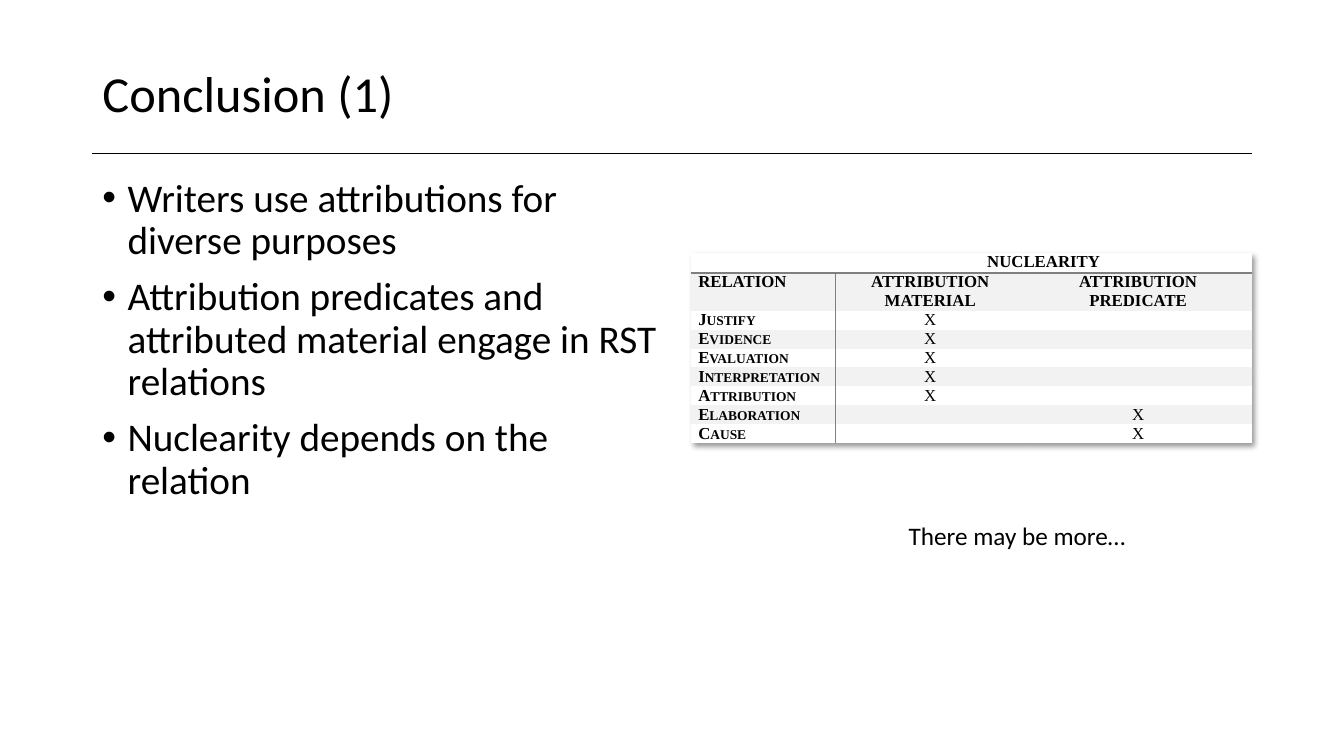
from lxml.etree import SubElement
from pptx import Presentation
from pptx.dml.color import RGBColor
from pptx.enum.shapes import MSO_CONNECTOR
from pptx.enum.text import MSO_ANCHOR, MSO_AUTO_SIZE, PP_ALIGN
from pptx.oxml import parse_xml
from pptx.oxml.ns import nsdecls, qn
from pptx.util import Pt

PX = 9525
COLORS = {"text": "000000", "rule": "7F7F7F", "light": "FFFFFF", "band": "F2F2F2"}
NO_STYLE = "{2D5ABB26-0587-4C30-8999-92F81FD0307C}"
BULLETS = [
    "Writers use attributions for diverse purposes",
    "Attribution predicates and attributed material engage in RST relations",
    "Nuclearity depends on the relation",
]
ROWS = [
    ("", "NUCLEARITY", ""),
    ("RELATION", "ATTRIBUTION MATERIAL", "ATTRIBUTION PREDICATE"),
    ("Justify", "X", ""),
    ("Evidence", "X", ""),
    ("Evaluation", "X", ""),
    ("Interpretation", "X", ""),
    ("Attribution", "X", ""),
    ("Elaboration", "", "X"),
    ("Cause", "", "X"),
]
COL_WIDTHS = [138, 180, 216]
ROW_HEIGHTS = [19, 36] + [18] * 7


def box(*lengths):
    return [n * PX for n in lengths]


def set_font(p, name, size, bold=False):
    p.font.name = name
    p.font.size = Pt(size)
    p.font.bold = bold
    p.font.color.rgb = RGBColor.from_string(COLORS["text"])


prs = Presentation()
prs.slide_width, prs.slide_height = box(1280, 720)
s = prs.slides.add_slide(prs.slide_layouts[1])

line = s.shapes.add_connector(MSO_CONNECTOR.STRAIGHT, *box(88, 146, 1192, 146))
line.line.color.rgb = RGBColor.from_string(COLORS["text"])
line.line.width = Pt(0.5)
SubElement(line._element.spPr, qn("a:effectLst"))

title = s.shapes.title
title.left, title.top, title.width, title.height = box(88, 38, 1104, 108)
tf = title.text_frame
tf.text = "Conclusion (1)"
tf.vertical_anchor = MSO_ANCHOR.MIDDLE
p = tf.paragraphs[0]
p.alignment = PP_ALIGN.LEFT
p.line_spacing = 0.9
set_font(p, "Calibri", 36)

body = s.placeholders[1]
body.left, body.top, body.width, body.height = box(88, 165, 555, 484)
tf = body.text_frame
tf.text = "\n".join(BULLETS)
for p in tf.paragraphs:
    p.line_spacing = 0.9
    p.space_before = Pt(10)
    set_font(p, "Calibri", 28)
    pPr = p._p.get_or_add_pPr()
    pPr.set("marL", str(24 * PX))
    pPr.set("indent", str(-24 * PX))

frame = s.shapes.add_table(
    len(ROWS), len(COL_WIDTHS), *box(658, 241, sum(COL_WIDTHS), sum(ROW_HEIGHTS))
)
table = frame.table
table.first_row = table.horz_banding = False
tblPr = table._tbl.tblPr
tblPr.find(qn("a:tableStyleId")).text = NO_STYLE
tblPr.insert(0, parse_xml(
    f'<a:effectLst {nsdecls("a")}><a:outerShdw blurRad="50800" dist="38100" dir="2700000">'
    f'<a:srgbClr val="{COLORS["text"]}"><a:alpha val="40000"/></a:srgbClr>'
    '</a:outerShdw></a:effectLst>'
))
for col, width in zip(table.columns, COL_WIDTHS):
    col.width = width * PX
for row, height in zip(table.rows, ROW_HEIGHTS):
    row.height = height * PX
table.cell(0, 1).merge(table.cell(0, 2))

for r, texts in enumerate(ROWS):
    for c, text in enumerate(texts):
        cell = table.cell(r, c)
        cell.margin_left = cell.margin_right = 7 * PX
        cell.margin_top = cell.margin_bottom = 0
        cell.fill.solid()
        cell.fill.fore_color.rgb = RGBColor.from_string(COLORS["band" if r % 2 else "light"])
        p = cell.text_frame.paragraphs[0]
        p.alignment = PP_ALIGN.CENTER if c else PP_ALIGN.LEFT
        set_font(p, "Times New Roman", 12, bold=r < 2 or c == 0)
        if text:
            p.add_run().text = text
        else:
            SubElement(p._p, qn("a:endParaRPr")).set("sz", "1200")
        if r > 1 and c == 0:
            p._p.pPr.find(qn("a:defRPr")).set("cap", "small")
        side = "lnB" if r == 0 else "lnR" if c == 0 else None
        if side:
            cell._tc.get_or_add_tcPr().insert(0, parse_xml(
                f'<a:{side} {nsdecls("a")} w="12700"><a:solidFill>'
                f'<a:srgbClr val="{COLORS["rule"]}"/></a:solidFill></a:{side}>'
            ))

note = s.shapes.add_textbox(*box(856, 491, 233, 38))
tf = note.text_frame
tf.word_wrap = True
tf.auto_size = MSO_AUTO_SIZE.SHAPE_TO_FIT_TEXT
tf.text = "There may be more…"
set_font(tf.paragraphs[0], "Calibri", 18)

prs.save("out.pptx")
